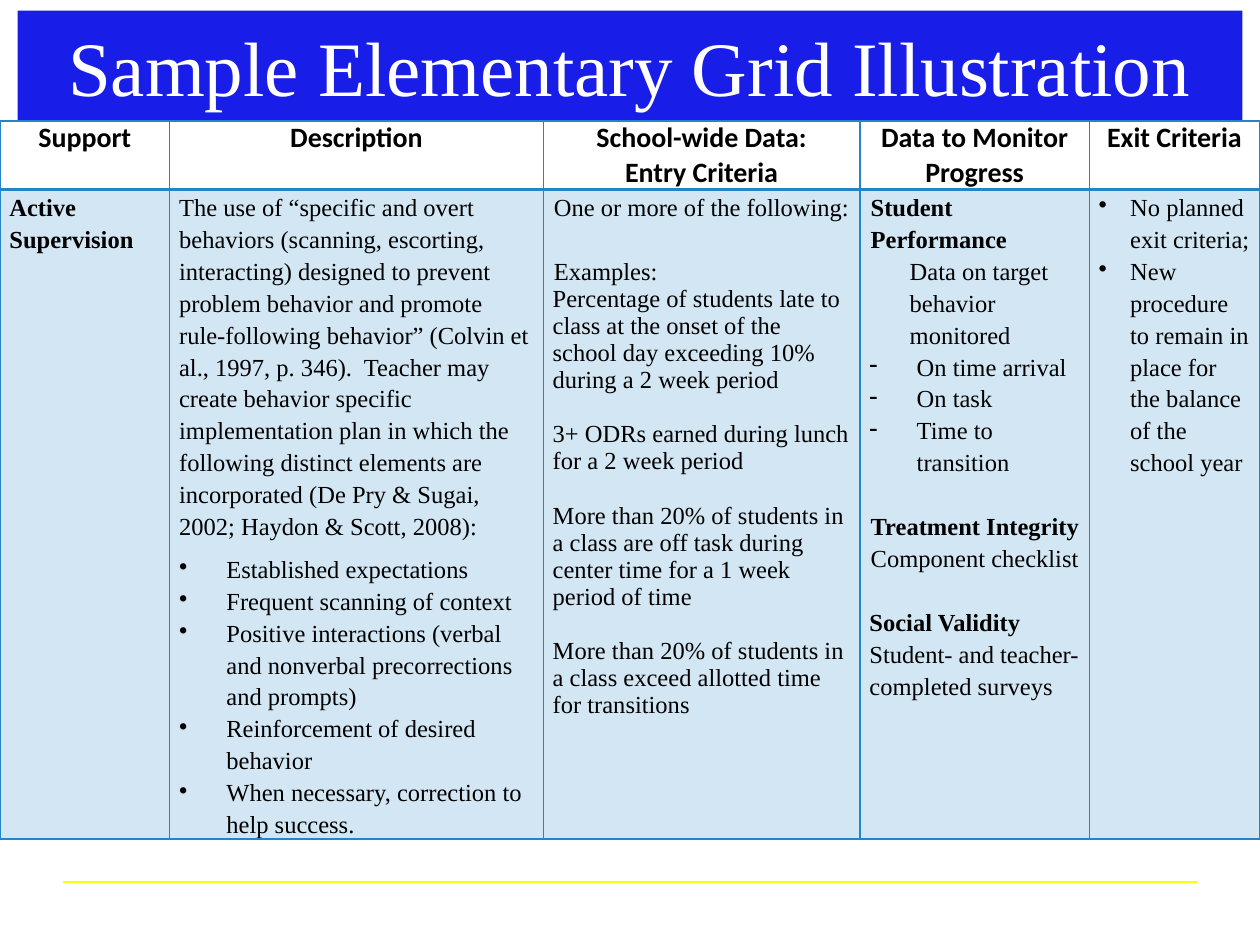
from lxml import etree
from pptx import Presentation
from pptx.dml.color import RGBColor
from pptx.enum import shapes, text
from pptx.oxml import ns
from pptx.util import Pt

BLUE = "2683C6"
SERIF = "Times New Roman"
WIDTHS = [97, 213.5, 181, 131, 97.5]
HEIGHTS = [39, 371]
HEADS = [["Support"], ["Description"], ["School-wide Data:", "Entry Criteria"],
         ["Data to Monitor Progress"], ["Exit Criteria"]]
WIDE = dict(lead=1.18)
IN = dict(WIDE, left=0.7)
DOT = dict(WIDE, mark="•", left=27, hang=27)
DASH = dict(DOT, mark="-")
NEAR = dict(DOT, left=18, hang=18)

BODY = [
    [("Active Supervision", dict(WIDE, bold=True))],
    [("The use of “specific and overt behaviors (scanning, escorting, interacting) "
      "designed to prevent problem behavior and promote rule-following behavior” "
      "(Colvin et al., 1997, p. 346).  Teacher may create behavior specific "
      "implementation plan in which the following distinct elements are incorporated "
      "(De Pry & Sugai, 2002; Haydon & Scott, 2008):", dict(WIDE, after=6)),
     ("Established expectations", DOT),
     ("Frequent scanning of context", DOT),
     ("Positive interactions (verbal and nonverbal precorrections and prompts)", DOT),
     ("Reinforcement of desired behavior", DOT),
     ("When necessary, correction to help success.", DOT)],
    [("One or more of the following:", IN),
     ("Examples:", dict(IN, before=18.3)),
     ("Percentage of students late to class at the onset of the school day "
      "exceeding 10% during a 2 week period", {}),
     ("3+ ODRs earned during lunch for a 2 week period", dict(before=15.5)),
     ("More than 20% of students in a class are off task during center time "
      "for a 1 week period of time", dict(before=15.5)),
     ("More than 20% of students in a class exceed allotted time for transitions",
      dict(before=15.5))],
    [("Student Performance", dict(IN, bold=True)),
     ("Data on target behavior monitored", dict(WIDE, left=23)),
     ("On time arrival", DASH),
     ("On task", DASH),
     ("Time to transition", DASH),
     ("Treatment Integrity", dict(IN, bold=True, before=18.3, rest=" Component checklist")),
     ("Social Validity", dict(WIDE, bold=True, before=18.3)),
     ("Student- and teacher-completed surveys", WIDE)],
    [("No planned exit criteria;", NEAR),
     ("New procedure to remain in place for the balance of the school year", NEAR)],
]


def rgb(code):
    return RGBColor.from_string(code)


def node(top, tag, **attrs):
    return etree.SubElement(top, ns.qn(tag), attrs)


def write(para, words, size=14, face=SERIF, color="000000", bold=False, align="LEFT",
          lead=None, before=0, after=0, left=0, hang=0, mark=None, rest=None):
    props = para._p.get_or_add_pPr()
    props.set("marL", str(Pt(left)))
    props.set("indent", str(-Pt(hang)))
    if mark:
        node(props, "a:buChar", char=mark)
    para.alignment = getattr(text.PP_ALIGN, align)
    para.line_spacing = lead
    para.space_before, para.space_after = Pt(before), Pt(after)
    for part, heavy in ((words, bold), (rest, False)):
        if part:
            run = para.add_run()
            run.text = part
            font = run.font
            font.size, font.name, font.bold = Pt(size), face, heavy
            font.color.rgb = rgb(color)


def edge(cell, sides):
    props = cell._tc.get_or_add_tcPr()
    for side, width in sides.items():
        line = node(props, "a:ln" + side, w=str(Pt(width)))
        node(node(line, "a:solidFill"), "a:srgbClr", val=BLUE)


def fill(cell, code, alpha):
    cell.fill.solid()
    cell.fill.fore_color.rgb = rgb(code)
    tint = cell._tc.tcPr.find(".//" + ns.qn("a:solidFill") + "[last()]")
    solid = cell._tc.tcPr.find(ns.qn("a:solidFill"))
    tint = solid if solid is not None else tint
    node(tint[0], "a:alpha", val=str(alpha * 1000))


def title(slide):
    box = slide.shapes.title
    box.left, box.top, box.width, box.height = Pt(10), Pt(6), Pt(700), Pt(63.5)
    box.fill.solid()
    box.fill.fore_color.rgb = rgb("181DE8")
    frame = box.text_frame
    frame.auto_size = text.MSO_AUTO_SIZE.NONE
    frame.vertical_anchor = text.MSO_ANCHOR.MIDDLE
    write(frame.paragraphs[0], "Sample Elementary Grid Illustration",
          size=44, color="FFFFFF", align="CENTER")


def rule(slide):
    line = slide.shapes.add_connector(shapes.MSO_CONNECTOR.STRAIGHT,
                                      Pt(36), Pt(504), Pt(684), Pt(504))
    line.line.color.rgb = rgb("FFFF00")
    line.line.width = Pt(0.75)
    node(line._element.spPr, "a:effectLst")


def put(cell, paras):
    cell.margin_left = cell.margin_right = Pt(5.4)
    cell.margin_top = cell.margin_bottom = 0
    frame = cell.text_frame
    for i, (words, style) in enumerate(paras):
        para = frame.add_paragraph() if i else frame.paragraphs[0]
        write(para, words, **style)


def grid(slide):
    table = slide.shapes.add_table(2, len(WIDTHS), 0, Pt(69.2),
                                   Pt(sum(WIDTHS)), Pt(sum(HEIGHTS))).table
    for row, height in zip(table.rows, HEIGHTS):
        row.height = Pt(height)
    head = dict(size=16, face="Calibri", bold=True, align="CENTER")
    for i, width in enumerate(WIDTHS):
        table.columns[i].width = Pt(width)
        top, low = table.cell(0, i), table.cell(1, i)
        put(top, [(words, head) for words in HEADS[i]])
        put(low, BODY[i])
        edge(top, dict(L=1, R=1, T=1, B=2))
        edge(low, dict(L=1, R=1, T=2, B=1))
        top.fill.background()
        fill(low, BLUE, 20)


def main():
    deck = Presentation()
    deck.slide_width, deck.slide_height = Pt(720), Pt(540)
    slide = deck.slides.add_slide(deck.slide_layouts[5])
    title(slide)
    rule(slide)
    grid(slide)
    deck.save("out.pptx")


if __name__ == "__main__":
    main()
